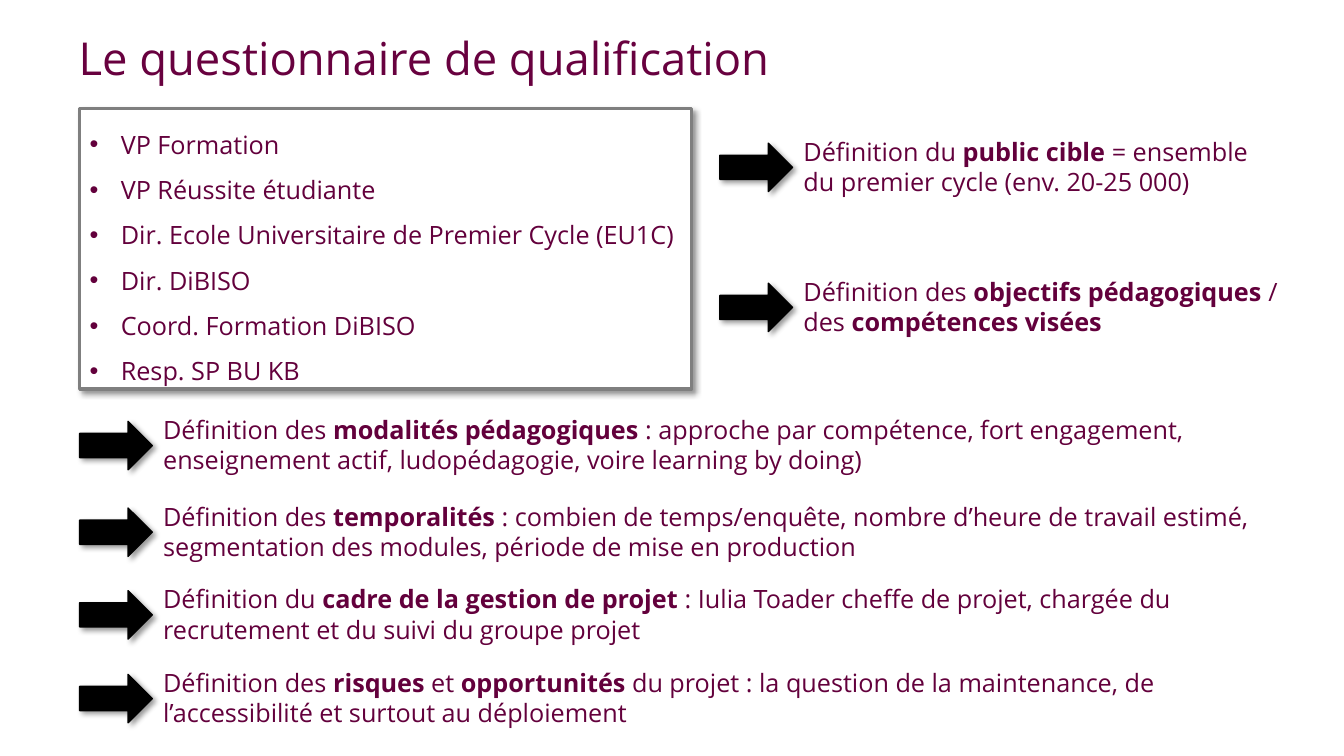
import pptx
import pptx.dml.color
import pptx.enum.shapes
import pptx.enum.text
import pptx.oxml
import pptx.oxml.ns
import pptx.util
from pptx.util import Inches

FONT = "Open Sans"
PLUM = "63003C"
SHAPES = pptx.enum.shapes.MSO_SHAPE
ANCHOR = pptx.enum.text.MSO_ANCHOR
AUTO_SIZE = pptx.enum.text.MSO_AUTO_SIZE

ROLES = [
    "VP Formation",
    "VP Réussite étudiante",
    "Dir. Ecole Universitaire de Premier Cycle (EU1C)",
    "Dir. DiBISO",
    "Coord. Formation DiBISO",
    "Resp. SP BU KB",
]

# Arrow left, arrow top, text width, text with **bold** parts
DEFINITIONS = [
    (7.14, 1.42, 4.68, "Définition du **public cible **= ensemble du premier cycle (env. 20-25 000)"),
    (7.14, 2.81, 4.92, "Définition des **objectifs pédagogiques **/ des **compétences visées**"),
    (0.79, 4.18, 11.04, "Définition des **modalités pédagogiques **: approche par compétence, "
     "fort engagement, enseignement actif, ludopédagogie, voire learning by doing)"),
    (0.79, 5.04, 11.04, "Définition des **temporalités** : combien de temps/enquête, "
     "nombre d’heure de travail estimé, segmentation des modules, période de mise en production"),
    (0.79, 5.86, 11.04, "Définition du **cadre de la gestion de projet **: Iulia Toader "
     "cheffe de projet, chargée du recrutement et du suivi du groupe projet"),
    (0.79, 6.69, 11.04, "Définition des **risques** et **opportunités** du projet : "
     "la question de la maintenance, de l’accessibilité et surtout au déploiement"),
]


def rgb(value):
    return pptx.dml.color.RGBColor.from_string(value)


def write(para, text, size=18, color=PLUM, spacing=None):
    """Fill a paragraph; parts between double asterisks become bold."""
    para.alignment = pptx.enum.text.PP_ALIGN.LEFT
    if spacing:
        para.line_spacing = spacing
    for index, part in enumerate(text.split("**")):
        if part:
            span = para.add_run()
            span.text = part
            span.font.name = FONT
            span.font.size = pptx.util.Pt(size)
            span.font.bold = index % 2 == 1
            span.font.color.rgb = rgb(color)


def add_bullet(para, indent):
    properties = para._p.get_or_add_pPr()
    properties.set("marL", str(indent))
    properties.set("indent", str(-indent))
    namespace = pptx.oxml.ns.nsdecls("a")
    properties.append(pptx.oxml.parse_xml(f'<a:buFont {namespace} typeface="Arial"/>'))
    properties.append(pptx.oxml.parse_xml(f'<a:buChar {namespace} char="•"/>'))


def add_shadowed_shape(page, kind, left, top, width, height, fill, line, line_width):
    shape = page.shapes.add_shape(kind, Inches(left), Inches(top), Inches(width), Inches(height))
    shape.fill.solid()
    shape.fill.fore_color.rgb = rgb(fill)
    shape.line.color.rgb = rgb(line)
    shape.line.width = pptx.util.Pt(line_width)
    shape.shadow.inherit = False
    effects = shape._element.spPr.find(pptx.oxml.ns.qn("a:effectLst"))
    effects.append(pptx.oxml.parse_xml(
        f'<a:outerShdw {pptx.oxml.ns.nsdecls("a")} blurRad="{pptx.util.Pt(4)}" '
        f'dist="{pptx.util.Pt(3)}" dir="2700000" algn="tl" rotWithShape="0">'
        '<a:srgbClr val="000000"><a:alpha val="40000"/></a:srgbClr></a:outerShdw>'))
    return shape


def add_title(page, text):
    title = page.shapes.title
    title.left, title.top = Inches(0.68), Inches(0.3)
    title.width, title.height = Inches(11.13), Inches(0.61)
    title.text_frame.vertical_anchor = ANCHOR.MIDDLE
    title.text_frame.auto_size = AUTO_SIZE.NONE
    write(title.text_frame.paragraphs[0], text, size=32.4, color="68013F", spacing=0.9)


def add_role_list(page, roles):
    box = add_shadowed_shape(page, SHAPES.RECTANGLE, 0.79, 1.08, 6.07, 2.78,
                             "FFFFFF", "7F7F7F", 2.25)
    frame = box.text_frame
    frame.word_wrap = False
    frame.auto_size = AUTO_SIZE.SHAPE_TO_FIT_TEXT
    frame.vertical_anchor = ANCHOR.TOP
    for index, role in enumerate(roles):
        para = frame.add_paragraph() if index else frame.paragraphs[0]
        write(para, role, spacing=1.5)
        add_bullet(para, Inches(0.31))


def add_definition(page, left, top, width, text):
    add_shadowed_shape(page, SHAPES.RIGHT_ARROW, left, top, 0.72, 0.48, "000000", "000000", 1)
    box = page.shapes.add_textbox(Inches(left + 0.73), Inches(top - 0.12),
                                  Inches(width), Inches(0.71))
    box.text_frame.word_wrap = True
    box.text_frame.auto_size = AUTO_SIZE.SHAPE_TO_FIT_TEXT
    write(box.text_frame.paragraphs[0], text)


def main():
    deck = pptx.Presentation()
    deck.slide_width, deck.slide_height = Inches(13.33), Inches(7.5)
    page = deck.slides.add_slide(deck.slide_layouts.get_by_name("Title Only"))
    add_title(page, "Le questionnaire de qualification")
    add_role_list(page, ROLES)
    for definition in DEFINITIONS:
        add_definition(page, *definition)
    deck.save("out.pptx")


if __name__ == "__main__":
    main()
